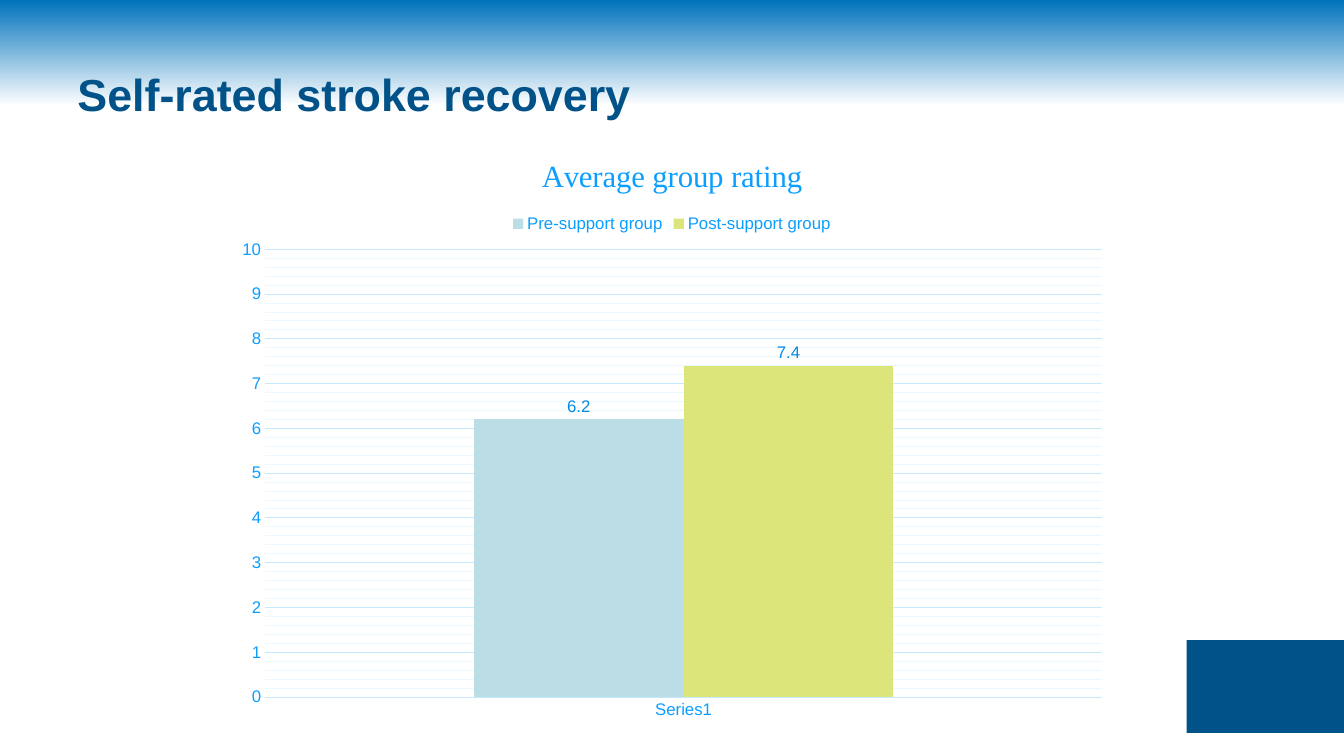
from lxml import etree
from pptx import Presentation
from pptx.chart.data import CategoryChartData
from pptx.dml.color import RGBColor
from pptx.enum.chart import XL_CHART_TYPE, XL_LABEL_POSITION, XL_LEGEND_POSITION, XL_TICK_MARK
from pptx.enum.shapes import MSO_SHAPE
from pptx.enum.text import MSO_ANCHOR
from pptx.oxml import parse_xml
from pptx.oxml.ns import nsdecls, qn
from pptx.util import Inches, Pt

SKY = RGBColor(0x00, 0x72, 0xBC)
WHITE = RGBColor(0xFF, 0xFF, 0xFF)
NAVY = RGBColor(0x00, 0x52, 0x88)
AXIS_BLUE = RGBColor(0x0C, 0x9E, 0xFF)
LABEL_BLUE = RGBColor(0x00, 0x8A, 0xE6)
GRID_BLUE = RGBColor(0xC7, 0xE9, 0xFF)
MINOR_GRID_BLUE = RGBColor(0xEC, 0xF8, 0xFF)
PALE_BLUE = RGBColor(0xBB, 0xDD, 0xE6)
LIME = RGBColor(0xDB, 0xE5, 0x7A)

RATINGS = [("Pre-support group", 6.2, PALE_BLUE), ("Post-support group", 7.4, LIME)]
PLOT_LAYOUT = {"x": 0.046, "y": 0.193, "w": 0.934, "h": 0.749}


def set_values(target, values):
    for name, value in values.items():
        setattr(target, name, value)


def format_font(font, size, color, name="Arial", bold=False):
    set_values(font, {"size": Pt(size), "name": name, "bold": bold})
    font.color.rgb = color


def format_line(line, color):
    line.color.rgb = color
    line.width = Pt(0.75)


def paint_background(slide):
    fill = slide.background.fill
    fill.gradient()
    fill.gradient_angle = 270
    for stop, position, color in zip(fill.gradient_stops, (0, 0.14), (SKY, WHITE)):
        stop.position = position
        stop.color.rgb = color


def add_corner_block(slide):
    block = slide.shapes.add_shape(
        MSO_SHAPE.RECTANGLE, Inches(11.77), Inches(6.35), Inches(1.56), Inches(0.92))
    block.shadow.inherit = False
    block.fill.solid()
    block.fill.fore_color.rgb = NAVY
    block.line.fill.background()


def add_title(slide, text):
    frame = slide.shapes.add_textbox(
        Inches(0.67), Inches(0.3), Inches(12), Inches(1.25)).text_frame
    set_values(frame, {"word_wrap": True, "vertical_anchor": MSO_ANCHOR.MIDDLE})
    paragraph = frame.paragraphs[0]
    paragraph.text = text
    format_font(paragraph.font, 32, NAVY, bold=True)


def format_minor_gridlines(axis, color):
    axis.has_minor_gridlines = True
    gridlines = axis._element.find(qn("c:minorGridlines"))
    gridlines.append(parse_xml(
        f'<c:spPr {nsdecls("c", "a")}><a:ln w="{Pt(0.75)}"><a:solidFill>'
        f'<a:srgbClr val="{color}"/></a:solidFill></a:ln></c:spPr>'))


def format_axes(chart):
    category_axis, value_axis = chart.category_axis, chart.value_axis
    for axis in (category_axis, value_axis):
        set_values(axis, {"major_tick_mark": XL_TICK_MARK.NONE,
                          "minor_tick_mark": XL_TICK_MARK.NONE})
        format_font(axis.tick_labels.font, 12, AXIS_BLUE)
    format_line(category_axis.format.line, GRID_BLUE)
    value_axis.format.line.fill.background()
    set_values(value_axis, {"minimum_scale": 0, "maximum_scale": 10,
                            "major_unit": 1, "minor_unit": 0.2,
                            "has_major_gridlines": True})
    format_line(value_axis.major_gridlines.format.line, GRID_BLUE)
    format_minor_gridlines(value_axis, MINOR_GRID_BLUE)


def format_series(series, color):
    series.format.fill.solid()
    series.format.fill.fore_color.rgb = color
    labels = series.data_labels
    set_values(labels, {"show_value": True, "position": XL_LABEL_POSITION.OUTSIDE_END})
    format_font(labels.font, 12, LABEL_BLUE)


def place_plot(chart):
    plot_area = chart.plots[0]._element.getparent()
    for layout in plot_area.findall(qn("c:layout")):
        plot_area.remove(layout)
    layout = parse_xml(f"<c:layout {nsdecls('c')}><c:manualLayout/></c:layout>")
    settings = {"layoutTarget": "inner", "xMode": "edge", "yMode": "edge", **PLOT_LAYOUT}
    for name, value in settings.items():
        etree.SubElement(layout[0], qn(f"c:{name}")).set("val", str(value))
    plot_area.insert(0, layout)


def add_rating_chart(slide):
    data = CategoryChartData()
    data.categories = ["Series1"]
    for name, rating, _ in RATINGS:
        data.add_series(name, [rating])
    chart = slide.shapes.add_chart(
        XL_CHART_TYPE.COLUMN_CLUSTERED, Inches(2.22), Inches(1.33),
        Inches(8.89), Inches(5.93), data).chart
    format_font(chart.font, 10, NAVY)
    set_values(chart, {"has_title": True, "has_legend": True})
    title = chart.chart_title.text_frame.paragraphs[0]
    title.text = "Average group rating"
    format_font(title.runs[0].font, 22, AXIS_BLUE, "Times New Roman")
    set_values(chart.legend, {"position": XL_LEGEND_POSITION.TOP, "include_in_layout": False})
    format_font(chart.legend.font, 12, AXIS_BLUE)
    plot = chart.plots[0]
    set_values(plot, {"gap_width": 199, "overlap": 0, "vary_by_categories": False})
    for series, (_, _, color) in zip(plot.series, RATINGS):
        format_series(series, color)
    format_axes(chart)
    place_plot(chart)


def main():
    presentation = Presentation()
    set_values(presentation, {"slide_width": Inches(13.33), "slide_height": Inches(7.5)})
    slide = presentation.slides.add_slide(presentation.slide_layouts[6])
    paint_background(slide)
    add_corner_block(slide)
    add_title(slide, "Self-rated stroke recovery")
    add_rating_chart(slide)
    presentation.save("out.pptx")


if __name__ == "__main__":
    main()
